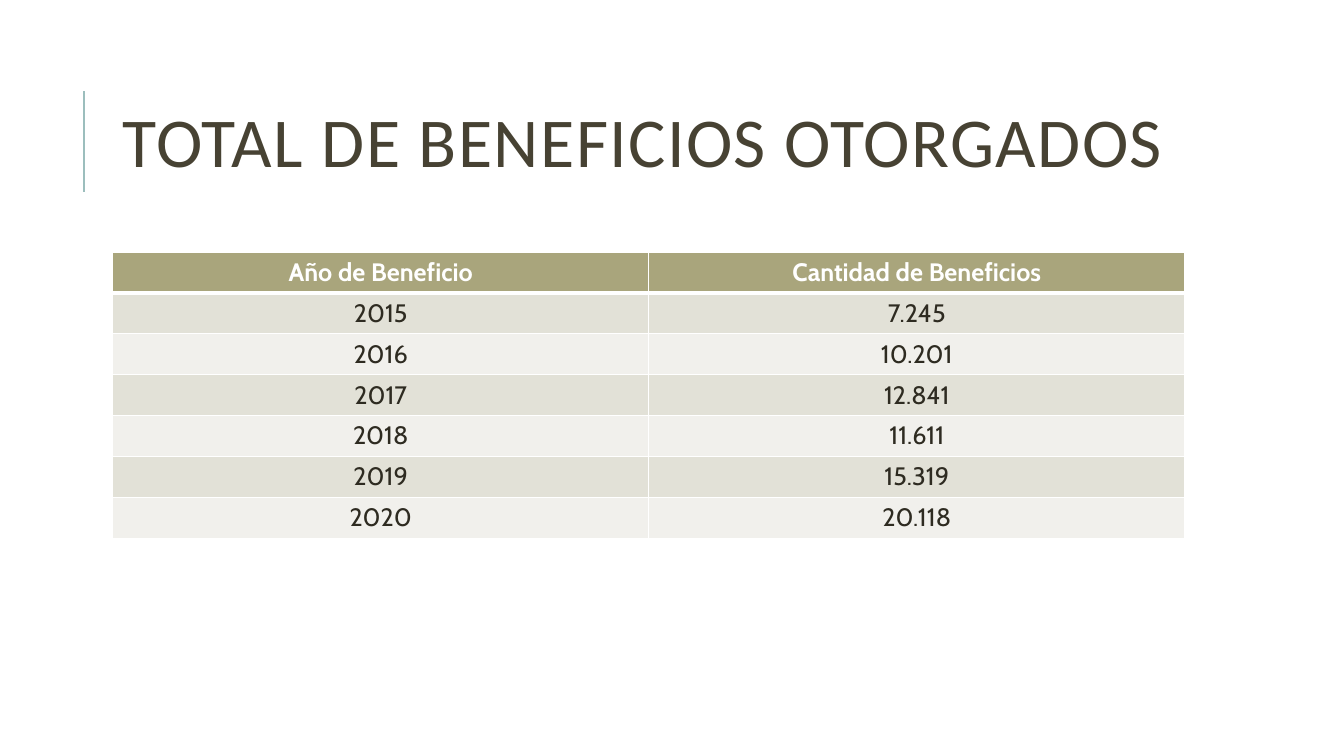
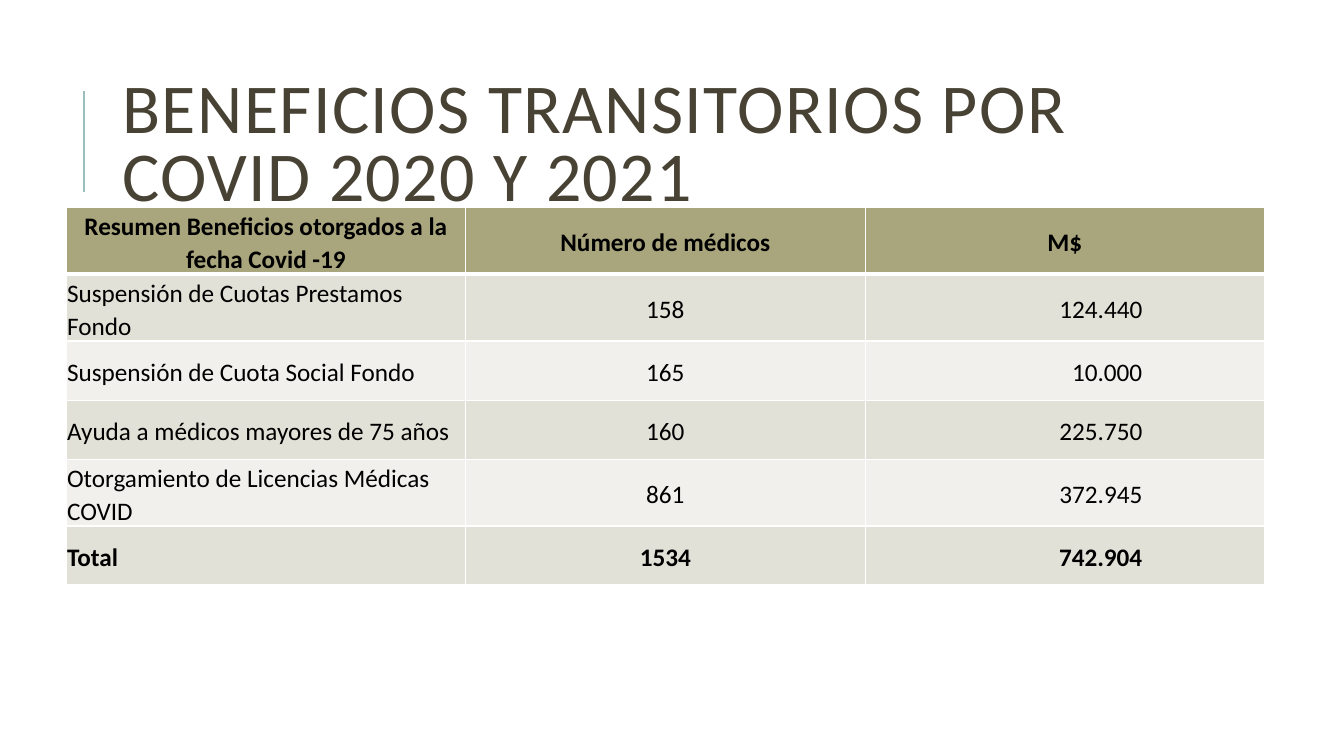
from lxml import etree
from pptx import Presentation, util as u
from pptx.dml.color import RGBColor
from pptx.enum import shapes, text
from pptx.oxml import ns

LEFT, MID, RIGHT = text.PP_ALIGN.LEFT, text.PP_ALIGN.CENTER, text.PP_ALIGN.RIGHT


def hue(code):
    return RGBColor.from_string(code)


class Deck:
    """Holds the shared style and the current slide."""

    ink, rule, head = "474233", "9CBEBD", "A9A57C"
    bands, edge = ("E2E1D7", "F1F0EC"), "FFFFFF"

    def __init__(self):
        self.prs = Presentation()
        self.prs.slide_width, self.prs.slide_height = u.Cm(33.87), u.Cm(19.05)

    def page(self, title):
        self.slide = self.prs.slides.add_slide(self.prs.slide_layouts[6])
        self.line(2.11, 4.83, 2.11, 2.29)
        self.title(title)

    def line(self, x, y, x2, y2):
        line = self.slide.shapes.add_connector(
            shapes.MSO_CONNECTOR.STRAIGHT, u.Cm(x), u.Cm(y), u.Cm(x2), u.Cm(y2))
        line.line.color.rgb = hue(self.rule)
        line.line.width = u.Pt(1.5)
        etree.SubElement(line._element.spPr, ns.qn("a:effectLst"))

    def run(self, para, words, size, font, color, bold=False):
        run = para.add_run()
        run.text = words
        run.font.size, run.font.name, run.font.bold = u.Pt(size), font, bold
        run.font.color.rgb = hue(color)
        return run

    def title(self, words):
        box = self.slide.shapes.add_textbox(u.Cm(2.84), u.Cm(1.63), u.Cm(27), u.Cm(4.17))
        frame = box.text_frame
        frame.word_wrap = True
        frame.vertical_anchor = text.MSO_ANCHOR.MIDDLE
        para = frame.paragraphs[0]
        para.line_spacing = 0.8
        run = self.run(para, words, 50, "Calibri", self.ink)
        run.font._element.set("spc", "100")

    def border(self, cell, row):
        props = cell._tc.get_or_add_tcPr()
        wide = {"T": 3 if row == 1 else 1, "B": 3 if row == 0 else 1}
        for side in "LRTB":
            line = etree.SubElement(props, ns.qn("a:ln" + side), w=str(u.Pt(wide.get(side, 1))))
            fill = etree.SubElement(line, ns.qn("a:solidFill"))
            etree.SubElement(fill, ns.qn("a:srgbClr"), val=self.edge)

    def table(self, x, y, width, high, rows, font, colors, aligns,
              tight=False, total=False, indent=0):
        count, cols = len(rows), len(rows[0])
        grid = self.slide.shapes.add_table(
            count, cols, u.Cm(x), u.Cm(y), u.Cm(width), u.Cm(high * count)).table
        for r, row in enumerate(rows):
            grid.rows[r].height = u.Cm(high)
            for c, words in enumerate(row):
                cell = grid.cell(r, c)
                self.border(cell, r)
                cell.fill.solid()
                cell.fill.fore_color.rgb = hue(self.bands[(r - 1) % 2] if r else self.head)
                para = cell.text_frame.paragraphs[0]
                para.alignment = aligns[c] if r else MID
                if tight:
                    cell.vertical_anchor = text.MSO_ANCHOR.MIDDLE
                    cell.margin_left = cell.margin_right = u.Cm(0.02)
                    cell.margin_top = u.Cm(0.05)
                    cell.margin_bottom = 0
                    para.line_spacing = 1.07
                if para.alignment == RIGHT:
                    cell.margin_right = u.Cm(indent)
                bold = r == 0 or (total and r == count - 1)
                self.run(para, words, 18, font, colors[min(r, 1)], bold)


def main():
    deck = Deck()
    deck.page("TOTAL DE BENEFICIOS OTORGADOS")
    deck.table(2.84, 6.35, 27.02, 1.03, [
        ("Año de Beneficio", "Cantidad de Beneficios"),
        ("2015", "7.245"),
        ("2016", "10.201"),
        ("2017", "12.841"),
        ("2018", "11.611"),
        ("2019", "15.319"),
        ("2020", "20.118"),
    ], "Cabin", ("FFFFFF", "2E2B21"), (MID, MID))

    deck.page("BENEFICIOS TRANSITORIOS POR COVID 2020 Y 2021")
    deck.table(1.67, 5.23, 30.2, 1.49, [
        ("Resumen Beneficios otorgados a la fecha Covid -19", "Número de médicos", "M$"),
        ("Suspensión de Cuotas Prestamos Fondo", "158", "124.440"),
        ("Suspensión de Cuota Social Fondo", "165", "10.000"),
        ("Ayuda a médicos mayores de 75 años", "160", "225.750"),
        ("Otorgamiento de Licencias Médicas COVID", "861", "372.945"),
        ("Total", "1534", "742.904"),
    ], "Calibri", ("000000", "000000"), (LEFT, MID, RIGHT),
        tight=True, total=True, indent=3.08)
    deck.prs.save("out.pptx")


if __name__ == "__main__":
    main()
